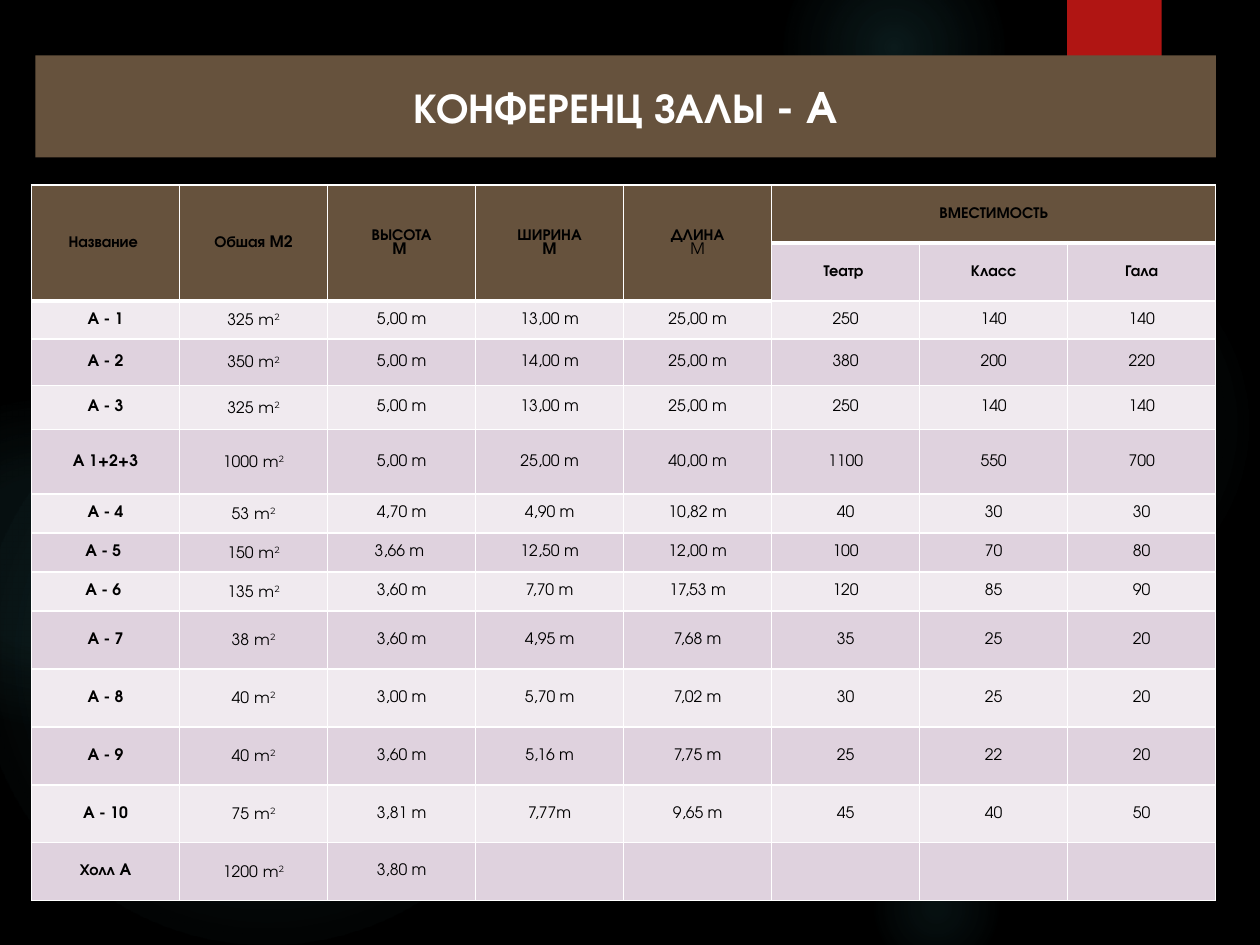
from lxml import etree
from pptx import Presentation
from pptx.dml.color import RGBColor
from pptx.enum import shapes, text
from pptx.oxml import parse_xml
from pptx.oxml.ns import nsdecls
from pptx.util import Inches, Pt

FONT, AREA_FONT = "TeX Gyre Adventor", "Montserrat"
BROWN, LIGHT, DARK = "66523D", "F0EAEF", "DFD2DE"
WHITE, BLACK, RED, TEAL = "FFFFFF", "000000", "B01513", "50B9C1"

HEADERS = ["Название ", "Обшая M2", "ВЫСОТА\nM ", "ШИРИНА\vM", "ДЛИНА\nM", "ВМЕСТИМОСТЬ", "", ""]
SUBHEADERS = [""] * 5 + ["Театр ", "Класс", "Гала"]
HALLS = [
    ["A - 1", "325 m²", "5,00 m", "13,00 m", "25,00 m", "250", "140", "140"],
    ["A - 2", "350 m²", "5,00 m", "14,00 m", "25,00 m", "380", "200", "220"],
    ["A - 3", "325 m²", "5,00 m", "13,00 m", "25,00 m", "250", "140", "140"],
    ["A 1+2+3", "1000 m²", "5,00 m", "25,00 m", "40,00 m", "1100", "550", "700"],
    ["A - 4", "53 m²", "4,70 m", "4,90 m", "10,82 m", "40", "30", "30"],
    ["A - 5 ", "150 m²", "3,66 m ", "12,50 m", "12,00 m", "100", "70", "80"],
    ["A - 6 ", "135 m²", "3,60 m", "7,70 m", "17,53 m", "120", "85", "90"],
    ["A - 7", "38 m²", "3,60 m", "4,95 m", "7,68 m", "35", "25", "20"],
    ["A - 8", "40 m²", "3,00 m", "5,70 m", "7,02 m", "30", "25", "20"],
    ["A - 9", "40 m²", "3,60 m", "5,16 m", "7,75 m", "25", "22", "20"],
    ["A - 10", "75 m²", "3,81 m", "7,77m", "9,65 m", "45", "40", "50"],
    ["Холл A", "1200 m²", "3,80 m", "", "", "", "", ""],
]
ROW_HEIGHTS = [0.46, 0.46, 0.3, 0.37, 0.35, 0.51] + [0.31] * 3 + [0.46] * 5

# left, top, diameter, gradient stops as (position %, opacity %)
GLOWS = [
    (6.89, 1.83, 3.08, [(0, 7), (36, 6), (69, 0)]),
    (6.22, -0.5, 1.75, [(0, 14), (36, 7), (73, 0)]),
    (6.89, 6.67, 1.08, [(0, 9), (36, 5), (66, 0)]),
    (-0.17, 2.92, 4.58, [(0, 11), (36, 10), (75, 0)]),
    (-0.92, 3.17, 2.58, [(0, 8), (36, 8), (72, 0)]),
]


def paint(fill, color):
    fill.solid()
    fill.fore_color.rgb = RGBColor.from_string(color)


def set_borders(cell, widths):
    """Put white borders, in points, before the fill of the cell."""
    properties = cell._tc.get_or_add_tcPr()
    for index, (side, width) in enumerate(widths.items()):
        properties.insert(index, parse_xml(
            f'<a:ln{side} {nsdecls("a")} w="{Pt(width)}"><a:solidFill>'
            f'<a:srgbClr val="{WHITE}"/></a:solidFill></a:ln{side}>'))


presentation = Presentation()
presentation.slide_width, presentation.slide_height = Inches(10), Inches(7.5)
slide = presentation.slides.add_slide(presentation.slide_layouts[5])
paint(slide.background.fill, BLACK)

for left, top, diameter, stops in GLOWS:
    glow = slide.shapes.add_shape(shapes.MSO_SHAPE.OVAL, Inches(left), Inches(top),
                                  Inches(diameter), Inches(diameter))
    glow.shadow.inherit = False
    glow.line.fill.background()
    stop_xml = "".join(
        f'<a:gs pos="{position * 1000}"><a:srgbClr val="{TEAL}">'
        f'<a:alpha val="{opacity * 1000}"/></a:srgbClr></a:gs>' for position, opacity in stops)
    gradient = parse_xml(
        f'<a:gradFill {nsdecls("a")}><a:gsLst>{stop_xml}</a:gsLst><a:path path="circle">'
        '<a:fillToRect l="50000" t="50000" r="50000" b="50000"/></a:path></a:gradFill>')
    glow._element.spPr.prstGeom.addnext(gradient)

ribbon = slide.shapes.add_shape(shapes.MSO_SHAPE.RECTANGLE, Inches(8.47), 0, Inches(0.75), Inches(1.2))
ribbon.shadow.inherit = False
paint(ribbon.fill, RED)
ribbon.line.fill.background()

rows = [HEADERS, SUBHEADERS] + HALLS
table = slide.shapes.add_table(len(rows), len(HEADERS), Inches(0.25), Inches(1.47),
                               Inches(9.4), Inches(sum(ROW_HEIGHTS))).table
table.first_row = table.horz_banding = False
for column in table.columns:
    column.width = Inches(9.4 / len(HEADERS))
for row, height in zip(table.rows, ROW_HEIGHTS):
    row.height = Inches(height)

for row_index, row in enumerate(rows):
    for column_index, content in enumerate(row):
        cell = table.cell(row_index, column_index)
        in_tall_header = column_index < 5
        last_header_row = 1 if in_tall_header else 0
        is_header = row_index <= last_header_row
        paint(cell.fill, BROWN if is_header else DARK if row_index % 2 else LIGHT)
        set_borders(cell, {"L": 1, "R": 1,
                           "T": 3 if row_index == last_header_row + 1 else 1,
                           "B": 3 if row_index == last_header_row else 1})
        cell.vertical_anchor = text.MSO_ANCHOR.MIDDLE
        cell.margin_left = cell.margin_right = Inches(0.03)
        cell.margin_top = cell.margin_bottom = 0
        for line_index, line in enumerate(content.split("\n")):
            frame = cell.text_frame
            paragraph = frame.add_paragraph() if line_index else frame.paragraphs[0]
            paragraph.alignment = text.PP_ALIGN.CENTER
            paragraph.text = line.removesuffix("m²")
            if line.endswith("m²"):
                for part in ("m", "2"):
                    paragraph.add_run().text = part
            for run_index, run in enumerate(paragraph.runs):
                run.font.size = Pt(9)
                run.font.name = AREA_FONT if run_index and line.endswith("m²") else FONT
                run.font.bold = (row_index < 2 or column_index == 0) and line != "M"
                run.font.color.rgb = RGBColor.from_string(BLACK)
            if line.endswith("m²"):
                run.font._element.set("baseline", "30000")

for column_index in range(5):
    table.cell(0, column_index).merge(table.cell(1, column_index))
table.cell(0, 5).merge(table.cell(0, 7))

title = slide.shapes.title
slide.shapes._spTree.append(title._element)
title.left, title.top, title.width, title.height = map(Inches, (0.28, 0.44, 9.37, 0.81))
paint(title.fill, BROWN)
title.text_frame.text = "КОНФЕРЕНЦ ЗАЛЫ - A"
title.text_frame.vertical_anchor = text.MSO_ANCHOR.MIDDLE
paragraph = title.text_frame.paragraphs[0]
paragraph.alignment = text.PP_ALIGN.CENTER
for name, value in {"size": Pt(24), "name": FONT, "bold": True}.items():
    setattr(paragraph.runs[0].font, name, value)
paragraph.runs[0].font.color.rgb = RGBColor.from_string(WHITE)

presentation.save("out.pptx")
